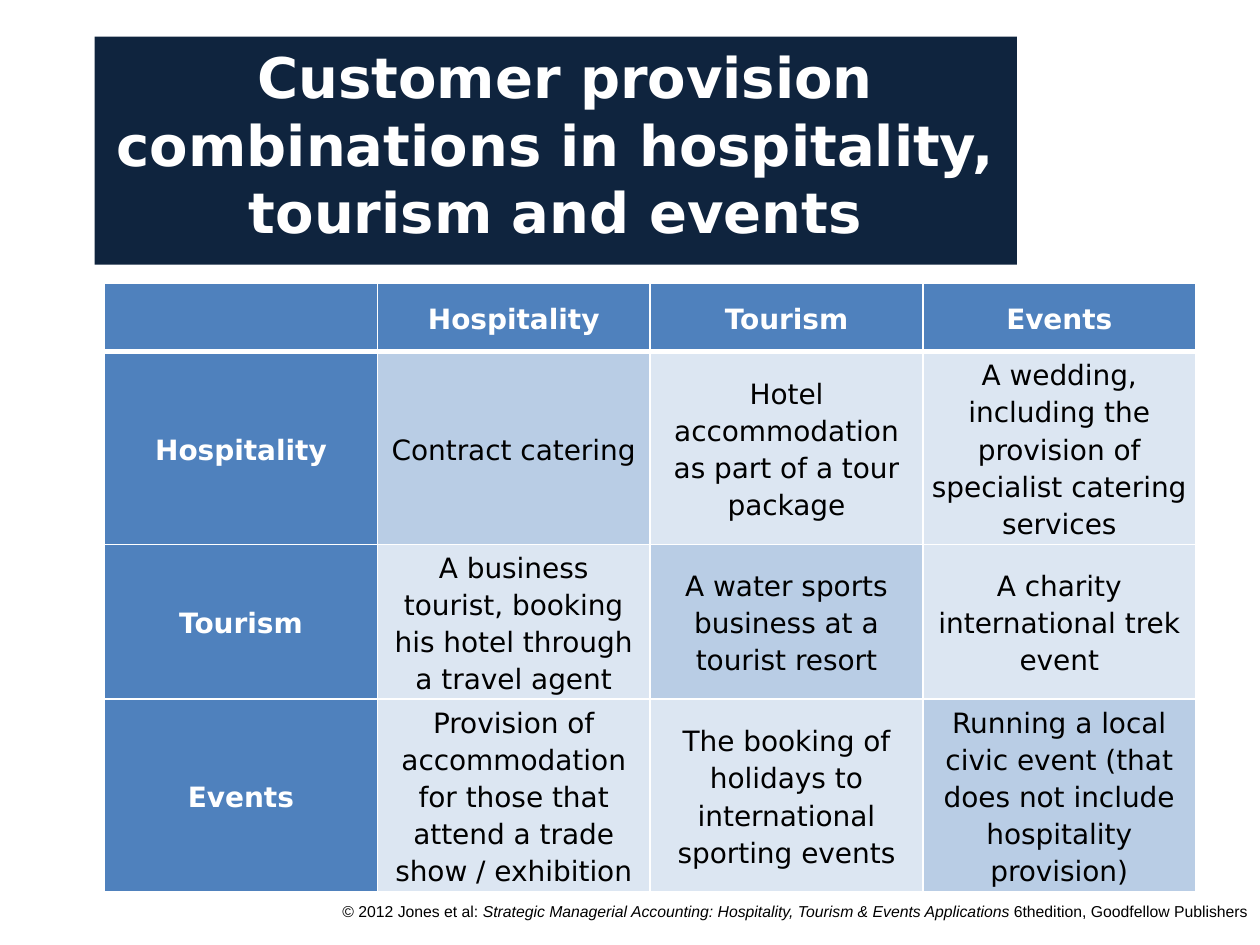
from lxml.etree import SubElement
from pptx import Presentation
from pptx.dml.color import RGBColor
from pptx.enum.text import MSO_ANCHOR as Anchor, PP_ALIGN as Align
from pptx.oxml.ns import qn
from pptx.util import Inches, Pt

NAVY = RGBColor(0x0F, 0x24, 0x3E)
BLUE = RGBColor(0x4F, 0x81, 0xBD)
MID_BLUE = RGBColor(0xB9, 0xCD, 0xE5)
PALE_BLUE = RGBColor(0xDC, 0xE6, 0xF2)
WHITE = RGBColor(0xFF, 0xFF, 0xFF)
BLACK = RGBColor(0x00, 0x00, 0x00)

SECTORS = ["Hospitality", "Tourism", "Events"]
PROVISIONS = [
    [
        "Contract catering",
        "Hotel accommodation as part of a tour package",
        "A wedding, including the provision of specialist catering services",
    ],
    [
        "A business tourist, booking his hotel through a travel agent",
        "A water sports business at a tourist resort",
        "A charity international trek event",
    ],
    [
        "Provision of accommodation for those that attend a trade show / exhibition",
        "The booking of holidays to international sporting events",
        "Running a local civic event (that does not include hospitality provision)",
    ],
]
ROW_HEIGHTS = [0.54, 1.38, 1.03, 1.38]
CITATION = [
    ("© 2012 Jones et al: ", False),
    ("Strategic Managerial Accounting: Hospitality, Tourism & Events Applications ", True),
    ("6thedition, Goodfellow Publishers", False),
]


class SlideBuilder:
    heading = {"name": "DejaVu Sans", "size": Pt(32), "bold": True}
    label = {"name": "DejaVu Sans", "size": Pt(16), "bold": True}
    body = {"name": "DejaVu Sans", "size": Pt(16), "bold": False}
    credit = {"name": "Arial", "size": Pt(9)}

    def __init__(self, slide):
        self.slide = slide

    def apply(self, target, values):
        for key, value in values.items():
            setattr(target, key, value)

    def place(self, shape, left, top, width, height):
        box = {"left": left, "top": top, "width": width, "height": height}
        self.apply(shape, {key: Inches(value) for key, value in box.items()})

    def add_text(self, paragraph, text, style, color):
        run = paragraph.add_run()
        run.text = text
        self.apply(run.font, style)
        run.font.color.rgb = color

    def title(self, text, *box):
        heading = self.slide.shapes.title
        self.place(heading, *box)
        heading.fill.solid()
        heading.fill.fore_color.rgb = NAVY
        heading.text_frame.word_wrap = True
        heading.text_frame.vertical_anchor = Anchor.TOP
        paragraph = heading.text_frame.paragraphs[0]
        paragraph.alignment = Align.CENTER
        self.add_text(paragraph, text, self.heading, WHITE)

    def footer(self, parts, *box):
        frame = self.slide.shapes.add_textbox(*map(Inches, box)).text_frame
        frame.word_wrap = True
        paragraph = frame.paragraphs[0]
        paragraph.alignment = Align.RIGHT
        for text, italic in parts:
            self.add_text(paragraph, text, {**self.credit, "italic": italic}, BLACK)

    def borders(self, cell, widths):
        properties = cell._tc.get_or_add_tcPr()
        for side, width in widths.items():
            line = SubElement(properties, qn(f"a:ln{side}"), w=str(Pt(width)))
            fill = SubElement(line, qn("a:solidFill"))
            SubElement(fill, qn("a:srgbClr"), val=str(WHITE))

    def cell(self, cell, text, style, color, fill, widths):
        self.borders(cell, widths)
        cell.fill.solid()
        cell.fill.fore_color.rgb = fill
        self.apply(cell, {
            "vertical_anchor": Anchor.MIDDLE,
            "margin_left": Inches(0.07), "margin_right": Inches(0.07),
            "margin_top": 0, "margin_bottom": 0,
        })
        paragraph = cell.text_frame.paragraphs[0]
        self.apply(paragraph, {"alignment": Align.CENTER, "line_spacing": 1.15})
        if text:
            self.add_text(paragraph, text, style, color)

    def matrix(self, sectors, provisions, heights, *box):
        rows = [["", *sectors]]
        rows += [[sector, *texts] for sector, texts in zip(sectors, provisions)]
        table = self.slide.shapes.add_table(len(rows), len(rows[0]), *map(Inches, box)).table
        for row, height in zip(table.rows, heights):
            row.height = Inches(height)
        for r, texts in enumerate(rows):
            widths = {"L": 1, "R": 1, "T": 3 if r == 1 else 1, "B": 3 if r == 0 else 1}
            for c, text in enumerate(texts):
                if r == 0 or c == 0:
                    look = self.label, WHITE, BLUE
                else:
                    look = self.body, BLACK, MID_BLUE if r == c else PALE_BLUE
                self.cell(table.cell(r, c), text, *look, widths)


def main():
    deck = Presentation()
    deck.slide_width, deck.slide_height = Inches(10), Inches(7.5)
    builder = SlideBuilder(deck.slides.add_slide(deck.slide_layouts[5]))
    builder.footer(CITATION, 2.23, 7.11, 7.77, 0.39)
    builder.title(
        " Customer provision combinations in hospitality, tourism and events",
        0.75, 0.29, 7.32, 1.81,
    )
    builder.matrix(SECTORS, PROVISIONS, ROW_HEIGHTS, 0.83, 2.25, 8.66, sum(ROW_HEIGHTS))
    deck.save("out.pptx")


if __name__ == "__main__":
    main()
